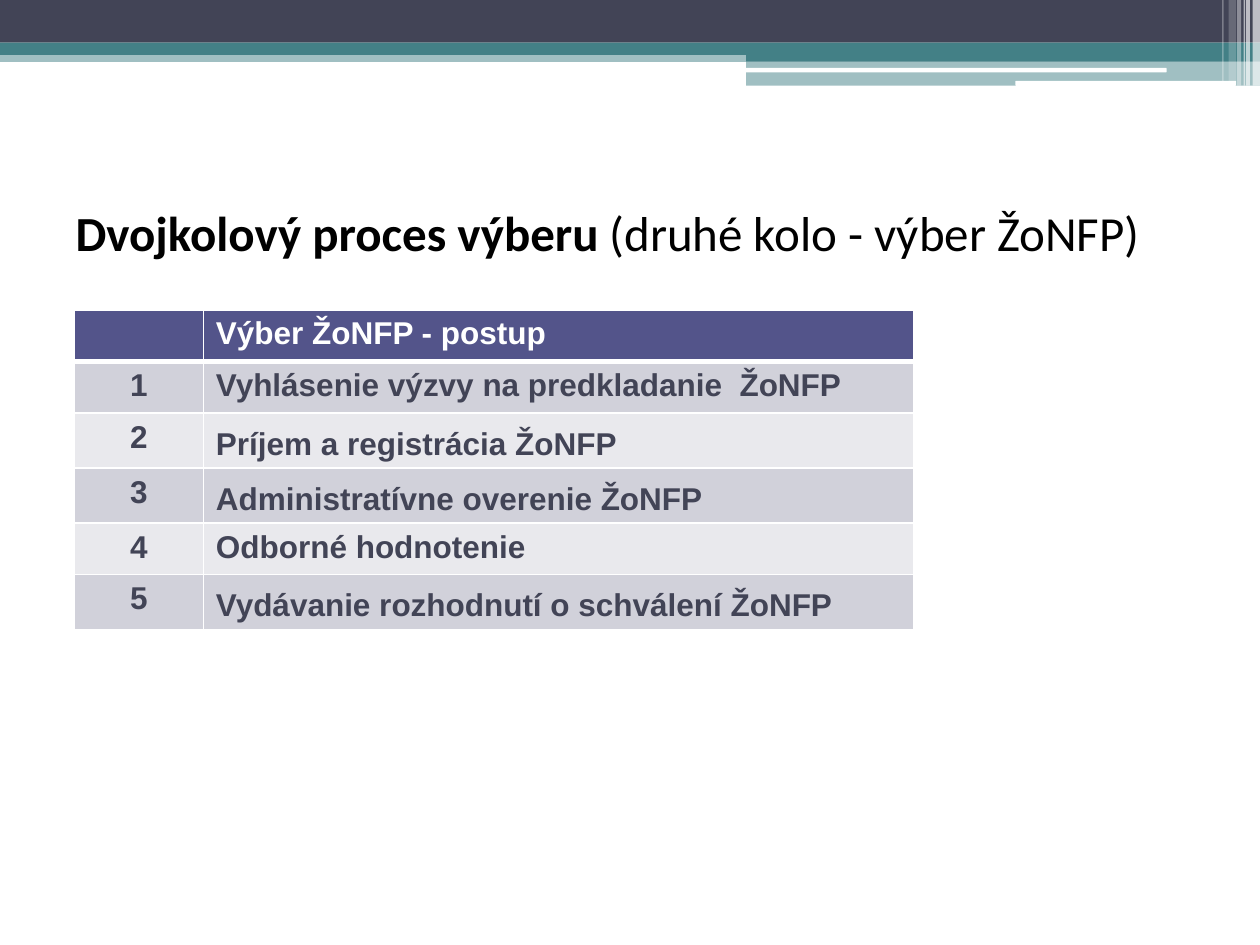
import pptx
import pptx.util
import pptx.dml.color
import pptx.enum.shapes
import pptx.enum.text
import pptx.oxml
import pptx.oxml.ns

Cm, Pt = pptx.util.Cm, pptx.util.Pt
RGB = pptx.dml.color.RGBColor
Shape = pptx.enum.shapes.MSO_SHAPE
Align = pptx.enum.text.PP_ALIGN

WHITE = RGB(0xFF, 0xFF, 0xFF)
BLACK = RGB(0, 0, 0)
SLATE = RGB(0x42, 0x44, 0x56)
TEAL = RGB(0x43, 0x80, 0x86)
INDIGO = RGB(0x53, 0x54, 0x8A)
DARK = RGB(0xD1, 0xD1, 0xDA)
LIGHT = RGB(0xE9, 0xE9, 0xED)
NS = pptx.oxml.ns.nsdecls("a")

deck = pptx.Presentation()
deck.slide_width, deck.slide_height = Cm(25.4), Cm(19.05)
slide = deck.slides.add_slide(deck.slide_layouts[5])


def add_bar(left, top, width, height, color, alpha=100, kind=Shape.RECTANGLE):
    """Draw a borderless bar; lengths in cm, alpha in percent."""
    bar = slide.shapes.add_shape(kind, Cm(left), Cm(top), Cm(width), Cm(height))
    bar.shadow.inherit = False
    bar.line.fill.background()
    bar.fill.solid()
    bar.fill.fore_color.rgb = color
    if alpha < 100:
        tint = bar.fill._xPr.find(".//" + pptx.oxml.ns.qn("a:srgbClr"))
        tint.append(pptx.oxml.parse_xml(f'<a:alpha {NS} val="{alpha * 1000}"/>'))


def set_edges(cell, bottom):
    """Give a cell white borders, 1 pt except for the bottom one."""
    props = cell._tc.get_or_add_tcPr()
    sides = {"lnL": 1, "lnR": 1, "lnT": 1, "lnB": bottom}
    for spot, (side, width) in enumerate(sides.items()):
        props.insert(spot, pptx.oxml.parse_xml(
            f'<a:{side} {NS} w="{Pt(width)}"><a:solidFill>'
            f'<a:srgbClr val="{WHITE}"/></a:solidFill></a:{side}>'))


# Header band
add_bar(0, 1.02, 25.4, 0.23, TEAL, 50)
add_bar(0, 0, 25.4, 0.86, SLATE)
add_bar(0, 0.86, 25.4, 0.25, TEAL)
add_bar(15.04, 0.99, 10.36, 0.25, TEAL)
add_bar(15.04, 1.24, 10.36, 0.49, TEAL, 50)
add_bar(15.01, 1.37, 8.51, 0.09, WHITE, kind=Shape.ROUNDED_RECTANGLE)
add_bar(20.47, 1.63, 4.45, 0.1, WHITE, kind=Shape.ROUNDED_RECTANGLE)
stripes = [
    (25.25, 0.15, 1.73, 65), (25.12, 0.08, 1.73, 65), (25.07, 0.03, 1.73, 60),
    (24.94, 0.08, 1.73, 40), (24.77, 0.15, 1.63, 20), (24.64, 0.03, 1.63, 30),
]
for left, width, height, alpha in stripes:
    add_bar(left, 0, width, height, WHITE, alpha)

# Title
title = slide.shapes.title
title.left, title.top = Cm(1.27), Cm(3.18)
title.width, title.height = Cm(22.86), Cm(2.97)
title.text_frame.vertical_anchor = pptx.enum.text.MSO_ANCHOR.MIDDLE
para = title.text_frame.paragraphs[0]
para.alignment = Align.LEFT
for text, bold in [("Dvojkolový proces výberu ", True),
                   ("(druhé kolo - výber ŽoNFP)", False)]:
    run = para.add_run()
    run.text = text
    run.font.name, run.font.size, run.font.bold = "Calibri", Pt(28), bold
    run.font.color.rgb = BLACK

# Table: step number, step name, alignment and line spacing of the name
rows = [
    ("", "Výber ŽoNFP - postup", Align.LEFT, None),
    ("1", "Vyhlásenie výzvy na predkladanie  ŽoNFP", Align.JUSTIFY, None),
    ("2", "Príjem a registrácia ŽoNFP", Align.JUSTIFY, 1.2),
    ("3", "Administratívne overenie ŽoNFP", Align.JUSTIFY, 1.2),
    ("4", "Odborné hodnotenie", Align.LEFT, None),
    ("5", "Vydávanie rozhodnutí o schválení ŽoNFP", Align.JUSTIFY, 1.2),
]
table = slide.shapes.add_table(
    len(rows), 2, Cm(1.5), Cm(6.25), Cm(16.93), Cm(6.24)).table
table.columns[0].width, table.columns[1].width = Cm(2.6), Cm(14.33)
for r, (step, name, align, space) in enumerate(rows):
    table.rows[r].height = Cm(1.04)
    for c, text in enumerate((step, name)):
        cell = table.cell(r, c)
        cell.fill.solid()
        cell.fill.fore_color.rgb = INDIGO if r == 0 else DARK if r % 2 else LIGHT
        set_edges(cell, 1 if r else 3)
        cell.text_frame.text = text
        para = cell.text_frame.paragraphs[0]
        para.alignment = align if c else Align.CENTER
        if c and space:
            para.line_spacing = space
        para.font.size = Pt(18)
        for run in para.runs:
            run.font.name, run.font.size, run.font.bold = "Arial", Pt(18), True
            run.font.color.rgb = SLATE if r else WHITE

deck.save("out.pptx")
